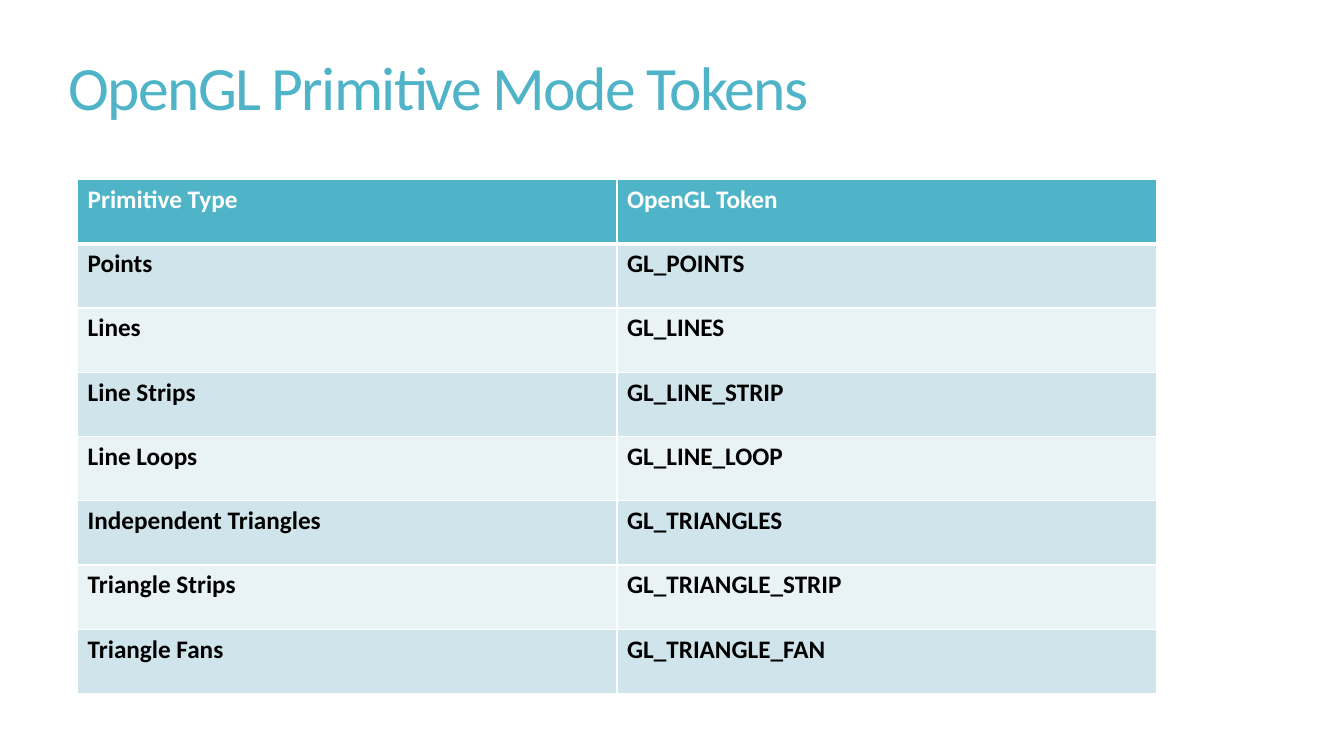
import pptx
import pptx.util
import pptx.dml.color
import pptx.enum.text
import pptx.oxml
import pptx.oxml.ns

PX = 9144  # EMU per px, 100 px to the inch
FONT = "Calibri"
COLORS = {
    "teal": "50B4C8",
    "dark": "D0E5EB",
    "light": "E9F2F5",
    "white": "FFFFFF",
    "black": "000000",
}
TITLE = "OpenGL Primitive Mode Tokens"
ROWS = [
    ("Primitive Type", "OpenGL Token"),
    ("Points", "GL_POINTS"),
    ("Lines", "GL_LINES"),
    ("Line Strips", "GL_LINE_STRIP"),
    ("Line Loops", "GL_LINE_LOOP"),
    ("Independent Triangles", "GL_TRIANGLES"),
    ("Triangle Strips", "GL_TRIANGLE_STRIP"),
    ("Triangle Fans", "GL_TRIANGLE_FAN"),
]


def color(name):
    return pptx.dml.color.RGBColor.from_string(COLORS[name])


def style(para, size, name, bold=False):
    font = para.font
    font.name = FONT
    font.size = pptx.util.Pt(size)
    font.bold = bold
    font.color.rgb = color(name)


def add_title(slide, left, top, width, height):
    box = slide.shapes.add_textbox(left * PX, top * PX, width * PX, height * PX)
    frame = box.text_frame
    frame.word_wrap = True
    frame.vertical_anchor = pptx.enum.text.MSO_ANCHOR.MIDDLE
    para = frame.paragraphs[0]
    para.line_spacing = 0.85
    run = para.add_run()
    run.text = TITLE
    style(para, 44, "teal")
    run.font._element.set("spc", "-120")


def set_edges(cell, widths):
    """Draw white borders; widths maps each side (L, R, T, B) to points."""
    props = cell._tc.get_or_add_tcPr()
    for index, (side, points) in enumerate(widths.items()):
        line = pptx.oxml.parse_xml(
            f'<a:ln{side} {pptx.oxml.ns.nsdecls("a")} w="{pptx.util.Pt(points)}">'
            f'<a:solidFill><a:srgbClr val="{COLORS["white"]}"/></a:solidFill>'
            f'</a:ln{side}>'
        )
        props.insert(index, line)


def add_tokens(slide, left, top, width, height):
    count, cols = len(ROWS), len(ROWS[0])
    table = slide.shapes.add_table(
        count, cols, left * PX, top * PX, width * PX, height * PX
    ).table
    for col in table.columns:
        col.width = width * PX // cols
    for r, texts in enumerate(ROWS):
        table.rows[r].height = height * PX // count
        fill = "teal" if r == 0 else ("light", "dark")[r % 2]
        edges = {"L": 1, "R": 1, "T": 3 if r == 1 else 1, "B": 3 if r == 0 else 1}
        for c, text in enumerate(texts):
            cell = table.cell(r, c)
            cell.text = text
            style(cell.text_frame.paragraphs[0], 18,
                  "white" if r == 0 else "black", bold=True)
            cell.fill.solid()
            cell.fill.fore_color.rgb = color(fill)
            set_edges(cell, edges)


def main():
    deck = pptx.Presentation()
    deck.slide_width, deck.slide_height = 1333 * PX, 750 * PX
    slide = deck.slides.add_slide(deck.slide_layouts[6])
    add_title(slide, 58, 0, 1178, 181)
    add_tokens(slide, 77, 178, 1070, 510)
    deck.save("out.pptx")


if __name__ == "__main__":
    main()
